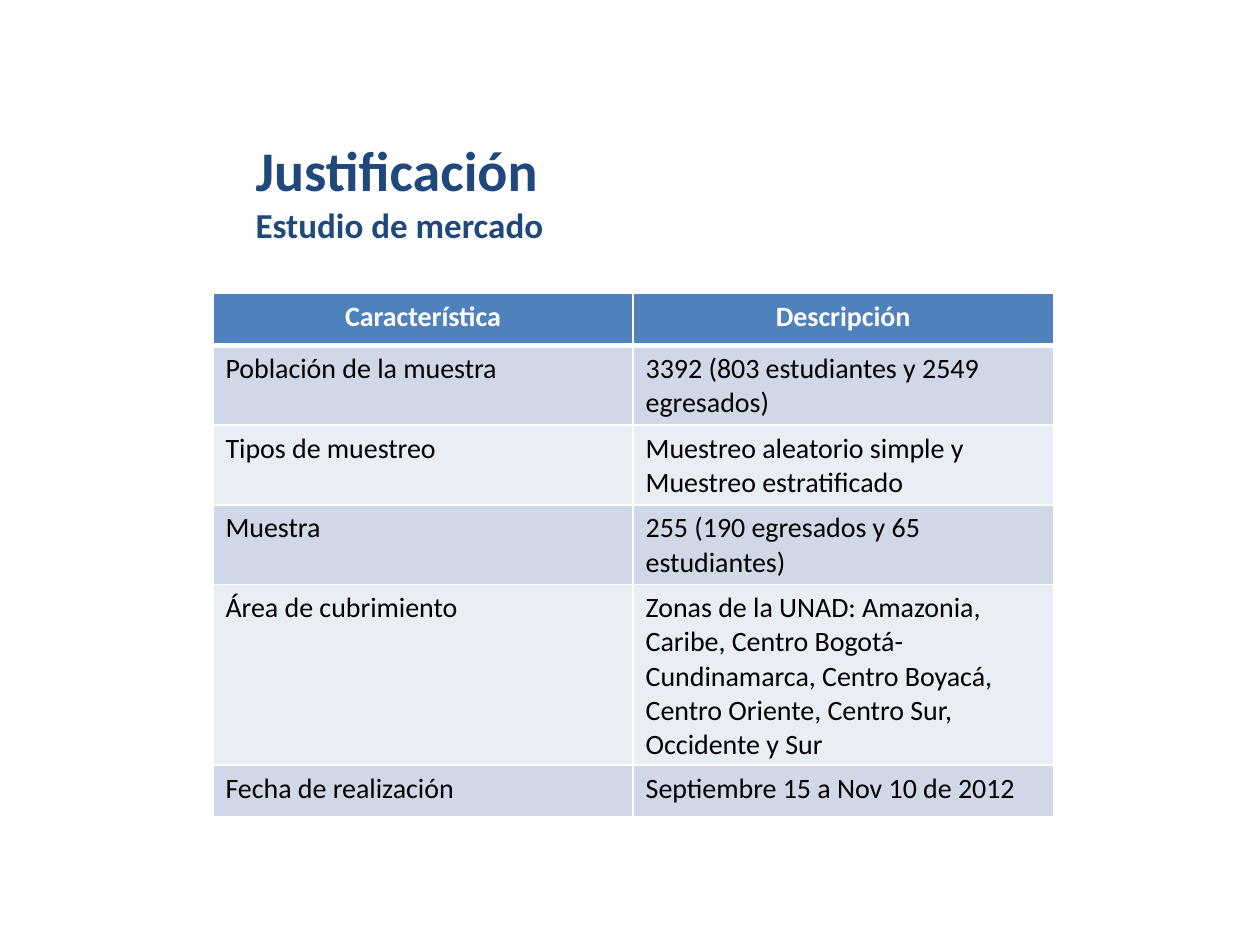
from lxml import etree
from pptx import Presentation
from pptx.dml.color import RGBColor
from pptx.enum.text import MSO_AUTO_SIZE, PP_ALIGN
from pptx.oxml.ns import qn
from pptx.util import Inches, Pt

CENTER, LEFT = PP_ALIGN.CENTER, PP_ALIGN.LEFT
FIT_SHAPE = MSO_AUTO_SIZE.SHAPE_TO_FIT_TEXT
NAVY, BLUE, WHITE, BLACK = "1F497D", "4F81BD", "FFFFFF", "000000"
BANDS = ("D0D8E8", "E9EDF4")

TITLE = [("Justificación", 32), ("Estudio de mercado", 20)]
ROWS = [
    ("Característica", "Descripción"),
    ("Población de la muestra", "3392 (803 estudiantes y 2549 egresados)"),
    ("Tipos de muestreo", "Muestreo aleatorio simple y Muestreo estratificado"),
    ("Muestra", "255 (190 egresados y 65 estudiantes)"),
    ("Área de cubrimiento",
     "Zonas de la UNAD: Amazonia, Caribe, Centro Bogotá-Cundinamarca, "
     "Centro Boyacá, Centro Oriente, Centro Sur, Occidente y Sur"),
    ("Fecha de realización", "Septiembre 15 a Nov 10 de 2012"),
]


def rgb(value):
    return RGBColor.from_string(value)


class Deck:
    """Holds the text style and the current slide."""

    font = "Calibri"

    def __init__(self, prs):
        self.s = prs.slides.add_slide(prs.slide_layouts[6])

    def add_text(self, p, text, size, color, bold=False, align=LEFT):
        p.alignment = align
        r = p.add_run()
        r.text = text
        for name, value in {"name": self.font, "size": Pt(size), "bold": bold}.items():
            setattr(r.font, name, value)
        r.font.color.rgb = rgb(color)

    def heading(self, lines, x, y, w, h):
        tf = self.s.shapes.add_textbox(Inches(x), Inches(y), Inches(w), Inches(h)).text_frame
        tf.word_wrap = True
        tf.auto_size = FIT_SHAPE
        for i, (text, size) in enumerate(lines):
            p = tf.add_paragraph() if i else tf.paragraphs[0]
            self.add_text(p, text, size, NAVY, bold=True)

    def border(self, cell, side, width):
        tc_pr = cell._tc.get_or_add_tcPr()
        ln = etree.SubElement(tc_pr, qn(f"a:ln{side}"), w=str(Pt(width)))
        fill = etree.SubElement(ln, qn("a:solidFill"))
        etree.SubElement(fill, qn("a:srgbClr"), val=WHITE)

    def table(self, rows, x, y, w, h, row_height):
        frame = self.s.shapes.add_table(
            len(rows), len(rows[0]), Inches(x), Inches(y), Inches(w), Inches(h))
        table = frame.table
        for i, texts in enumerate(rows):
            table.rows[i].height = Inches(row_height)
            header = i == 0
            widths = {"L": 1, "R": 1, "T": 3 if i == 1 else 1, "B": 3 if header else 1}
            for j, text in enumerate(texts):
                cell = table.cell(i, j)
                for side, width in widths.items():
                    self.border(cell, side, width)
                cell.fill.solid()
                cell.fill.fore_color.rgb = rgb(BLUE if header else BANDS[(i - 1) % 2])
                self.add_text(cell.text_frame.paragraphs[0], text, 16,
                              WHITE if header else BLACK, header, CENTER if header else LEFT)


def main():
    prs = Presentation()
    prs.slide_width, prs.slide_height = Inches(10), Inches(7.5)
    deck = Deck(prs)
    deck.heading(TITLE, 1.93, 1.03, 4.57, 0.98)
    deck.table(ROWS, 1.69, 2.33, 6.67, 4.14, 0.41)
    prs.save("out.pptx")


if __name__ == "__main__":
    main()
